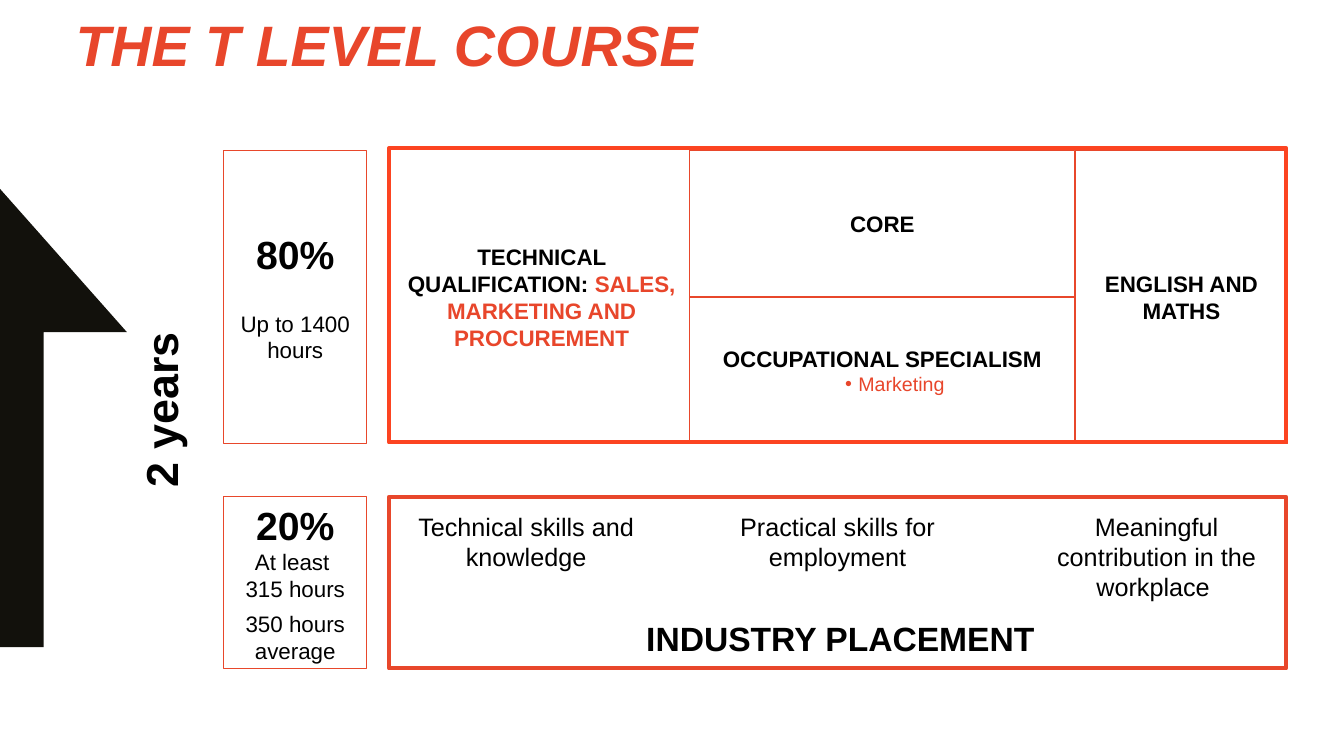
from lxml import etree
from pptx import Presentation
from pptx import util as u
from pptx.dml.color import RGBColor
from pptx.enum import shapes, text
from pptx.oxml import ns

ORANGE = RGBColor(0xE8, 0x46, 0x2B)
OUTLINE = RGBColor(0xE8, 0x47, 0x2B)
FRAME = RGBColor(0xFC, 0x44, 0x21)
BLACK = RGBColor(0, 0, 0)
INK = RGBColor(0x12, 0x11, 0x0C)
WHITE = RGBColor(255, 255, 255)


def place(item, box):
    """Set an item's position and size from a box in points."""
    for name, value in zip(("left", "top", "width", "height"), box):
        setattr(item, name, u.Pt(value))


def add_bullet(para):
    """Give a paragraph a hanging round bullet."""
    properties = para._p.get_or_add_pPr()
    properties.set("marL", str(u.Pt(27.36)))
    properties.set("indent", str(u.Pt(-9.36)))
    etree.SubElement(properties, ns.qn("a:buFont")).set("typeface", "Arial")
    etree.SubElement(properties, ns.qn("a:buChar")).set("char", "•")


def write(item, paragraphs, anchor=text.MSO_ANCHOR.MIDDLE, align=text.PP_ALIGN.CENTER):
    """Fill an item with paragraphs given as (spans, font values, paragraph values)."""
    frame = item.text_frame
    frame.word_wrap = True
    frame.auto_size = text.MSO_AUTO_SIZE.NONE
    frame.vertical_anchor = anchor
    for index, (spans, font, layout) in enumerate(paragraphs):
        para = frame.paragraphs[0] if index == 0 else frame.add_paragraph()
        values = dict(layout)
        if values.pop("bullet", False):
            add_bullet(para)
        for name, value in {"alignment": align, **values}.items():
            setattr(para, name, value)
        for words, colour in spans:
            span = para.add_run()
            span.text = words
            span.font.color.rgb = colour
            for name, value in {"name": "Arial", **font}.items():
                setattr(span.font, name, value)


def line(words, size, bold=False, colour=BLACK, **layout):
    """Describe a paragraph of one colour."""
    return [(words, colour)], {"size": u.Pt(size), "bold": bold}, layout


def add_panel(page, box, colour=None, weight=0.75, fill=None, paragraphs=()):
    """Draw a rectangle with an optional outline, fill and text."""
    panel = page.shapes.add_shape(shapes.MSO_SHAPE.RECTANGLE, *map(u.Pt, box))
    panel.shadow.inherit = False
    if fill is None:
        panel.fill.background()
    else:
        panel.fill.solid()
        panel.fill.fore_color.rgb = fill
    if colour is None:
        panel.line.fill.background()
    else:
        panel.line.color.rgb = colour
        panel.line.width = u.Pt(weight)
    write(panel, paragraphs)


def add_label(page, box, paragraphs, anchor=text.MSO_ANCHOR.MIDDLE, rotation=0):
    """Place a text box."""
    label = page.shapes.add_textbox(*map(u.Pt, box))
    label.rotation = rotation
    write(label, paragraphs, anchor)


def add_heading(page, box):
    """Format the slide title."""
    title = page.shapes.title
    place(title, box)
    font = {"size": u.Pt(40.7), "bold": True, "italic": True}
    spans = [("THE T LEVEL COURSE", ORANGE)]
    write(title, [(spans, font, {"line_spacing": 0.8})], align=text.PP_ALIGN.LEFT)


def add_duration(page, box):
    """Draw the half arrow and the upright duration label beside it."""
    left, top, width, height = box
    stem, neck, bottom = left + 31.2, top + 102.3, top + height
    outline = [(left + width, neck), (left, top), (left, bottom), (stem, bottom), (stem, neck)]
    points = [(u.Pt(x), u.Pt(y)) for x, y in outline]
    builder = page.shapes.build_freeform(*points[0])
    builder.add_line_segments(points[1:], close=True)
    arrow = builder.convert_to_shape()
    arrow.shadow.inherit = False
    arrow.fill.solid()
    arrow.fill.fore_color.rgb = INK
    arrow.line.fill.background()
    label = (left - 70.5, top + 140.8, 370, 34)
    add_label(page, label, [line("2 years", 32, True)], rotation=270)


def add_shares(page, box, lower_top, lower_height):
    """Draw the two boxes showing how the course time is shared."""
    left, top, width, height = box
    add_panel(page, box, OUTLINE, paragraphs=[
        line("80%", 28, True),
        line("Up to 1400 hours", 16, space_before=u.Pt(23))])
    add_panel(page, (left, lower_top, width, lower_height), OUTLINE, paragraphs=[
        line("20%", 28, True),
        line("At least ", 16),
        line("315 hours", 16, space_after=u.Pt(6)),
        line("350 hours average", 16)])


def add_qualification(page, box):
    """Draw the framed qualification with its parts."""
    left, top, width, height = box
    inner, half = top + 1.5, (height - 0.5) / 2
    middle, right = left + 214.7, left + 490
    spans = [("TECHNICAL QUALIFICATION: ", BLACK), ("SALES, MARKETING AND PROCUREMENT", ORANGE)]
    add_label(page, (left + 2.8, inner, 212.4, 2 * half),
              [(spans, {"size": u.Pt(16), "bold": True}, {})])
    parts = [[line("CORE", 16, True)],
             [line("OCCUPATIONAL SPECIALISM", 16, True),
              line("Marketing", 14, colour=ORANGE, bullet=True)]]
    for row, paragraphs in enumerate(parts):
        add_panel(page, (middle, inner + row * half, right - middle, half),
                  OUTLINE, paragraphs=paragraphs)
    add_panel(page, (right, inner, 152, 2 * half), OUTLINE,
              paragraphs=[line("ENGLISH AND MATHS", 16, True)])
    add_panel(page, box, FRAME, 3)


def add_placement(page, box):
    """Draw the framed industry placement with its three benefits."""
    left, top, width, height = box
    add_panel(page, (left + 2, top + 75.6, width, 49.7), fill=WHITE,
              paragraphs=[line("INDUSTRY PLACEMENT", 24, True)])
    add_panel(page, box, OUTLINE, 3)
    benefits = [("Technical skills and knowledge", 0, 195.8),
                ("Practical skills for employment", 221, 198.7),
                ("Meaningful contribution in the workplace ", 455.8, 185)]
    for words, offset, span_width in benefits:
        add_label(page, (left + offset, top + 6.5, span_width, 84),
                  [line(words, 18)], text.MSO_ANCHOR.TOP)


def main():
    """Build and save the deck."""
    deck = Presentation()
    deck.slide_width, deck.slide_height = u.Pt(960), u.Pt(540)
    page = deck.slides.add_slide(deck.slide_layouts[5])
    add_duration(page, (0, 134.9, 90.6, 327.3))
    add_heading(page, (46.8, 12.2, 781.2, 47.5))
    add_shares(page, (159.8, 107.3, 102.2, 209.5), 355, 122.4)
    add_qualification(page, (277.9, 105.8, 640.8, 210.2))
    add_placement(page, (277.9, 355, 640.8, 122.4))
    deck.save("out.pptx")


if __name__ == "__main__":
    main()
